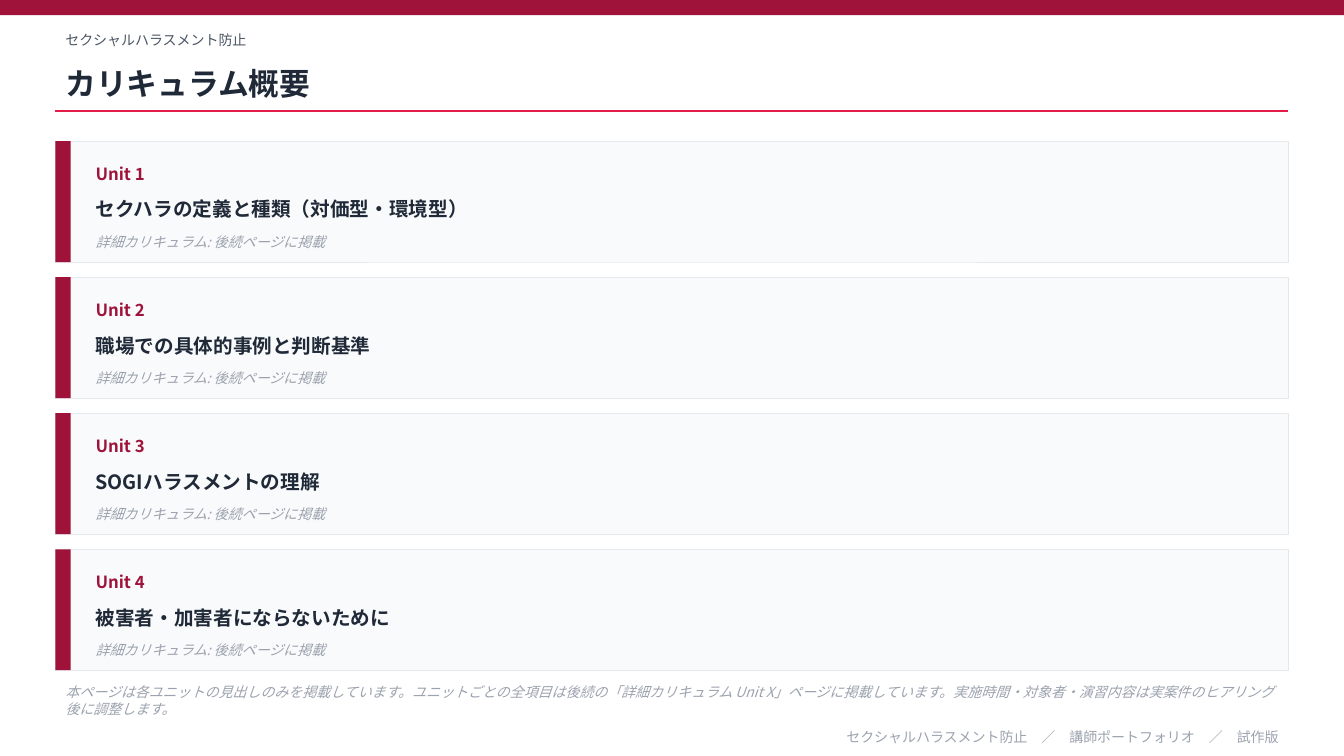
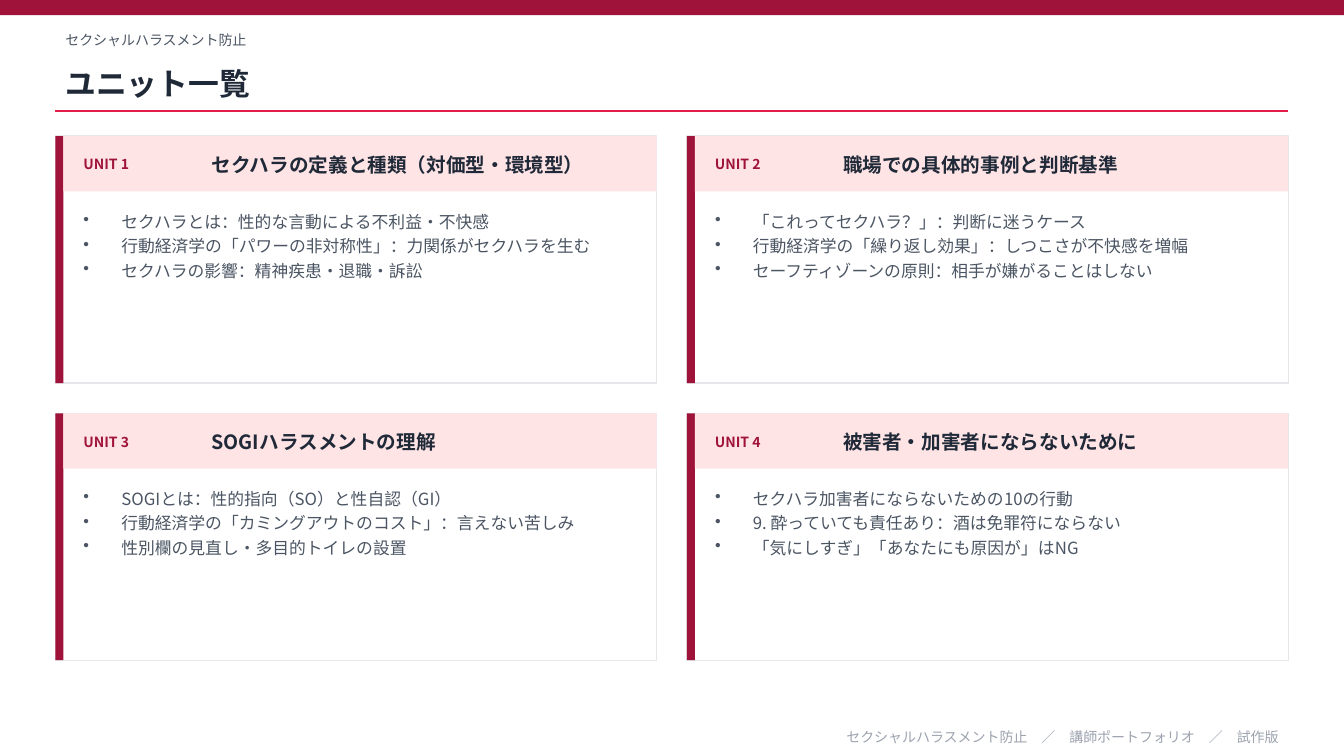
from lxml.etree import SubElement
from pptx import Presentation
from pptx.dml.color import RGBColor
from pptx.enum.shapes import MSO_CONNECTOR, MSO_SHAPE
from pptx.enum.text import MSO_ANCHOR, PP_ALIGN
from pptx.oxml.ns import qn
from pptx.util import Inches, Pt

FONT = "Noto Sans CJK JP"
COLORS = {
    "brand": "9F1239", "rule": "E11D48", "tint": "FFE4E6", "panel": "F9FAFB",
    "white": "FFFFFF", "border": "E5E7EB", "ink": "1F2937", "body": "4B5563",
    "muted": "9CA3AF",
}
COURSE = "セクシャルハラスメント防止"
FOOTER = COURSE + "　／　講師ポートフォリオ　／　試作版"
DETAIL = "詳細カリキュラム: 後続ページに掲載"
NOTE = ("本ページは各ユニットの見出しのみを掲載しています。"
        "ユニットごとの全項目は後続の「詳細カリキュラム Unit X」ページに掲載しています。"
        "実施時間・対象者・演習内容は実案件のヒアリング後に調整します。")
UNITS = [
    ("セクハラの定義と種類（対価型・環境型）", [
        "セクハラとは：性的な言動による不利益・不快感",
        "行動経済学の「パワーの非対称性」：力関係がセクハラを生む",
        "セクハラの影響：精神疾患・退職・訴訟"]),
    ("職場での具体的事例と判断基準", [
        "「これってセクハラ？」：判断に迷うケース",
        "行動経済学の「繰り返し効果」：しつこさが不快感を増幅",
        "セーフティゾーンの原則：相手が嫌がることはしない"]),
    ("SOGIハラスメントの理解", [
        "SOGIとは：性的指向（SO）と性自認（GI）",
        "行動経済学の「カミングアウトのコスト」：言えない苦しみ",
        "性別欄の見直し・多目的トイレの設置"]),
    ("被害者・加害者にならないために", [
        "セクハラ加害者にならないための10の行動",
        "9. 酔っていても責任あり：酒は免罪符にならない",
        "「気にしすぎ」「あなたにも原因が」はNG"]),
]


class Deck:
    """Style and current slide, laid out on a grid of 0.1-inch cells."""

    CELL = 0.1
    COLS, ROWS = 133.33, 75
    MARGIN = 5.5
    WIDTH = 122.3

    def __init__(self):
        """Start an empty deck."""
        self.prs = Presentation()
        self.prs.slide_width = self.cells(self.COLS)
        self.prs.slide_height = self.cells(self.ROWS)
        self.s = None

    def cells(self, n):
        """Turn a number of grid cells into a length."""
        return Inches(n * self.CELL)

    def color(self, name):
        """Look up a palette colour."""
        return RGBColor.from_string(COLORS[name])

    def slide(self, title):
        """Add a slide with the shared band, heading, rule and footer."""
        self.s = self.prs.slides.add_slide(self.prs.slide_layouts[6])
        self.rect(0, 0, self.COLS, 1.5, "brand")
        self.text(self.MARGIN, 2.5, self.WIDTH, 3, COURSE, 10, "body")
        self.text(self.MARGIN, 5.5, self.WIDTH, 5.5, title, 22, "ink", bold=True)
        self.rule(self.MARGIN, 11, self.WIDTH)
        self.text(self.MARGIN, 72, self.WIDTH, 2.2, FOOTER, 10, "muted",
                  align=PP_ALIGN.RIGHT)

    def rect(self, x, y, w, h, fill, border=None):
        """Draw a filled rectangle, with an optional border width."""
        sp = self.s.shapes.add_shape(MSO_SHAPE.RECTANGLE, *map(self.cells, (x, y, w, h)))
        sp.shadow.inherit = False
        sp.fill.solid()
        sp.fill.fore_color.rgb = self.color(fill)
        if border:
            sp.line.color.rgb = self.color("border")
            sp.line.width = Pt(border)
        else:
            sp.line.fill.background()

    def rule(self, x, y, w):
        """Draw the horizontal rule under the title."""
        ln = self.s.shapes.add_connector(
            MSO_CONNECTOR.STRAIGHT, *map(self.cells, (x, y, x + w, y)))
        ln.line.color.rgb = self.color("rule")
        ln.line.width = Pt(1)
        SubElement(ln._element.spPr, qn("a:effectLst"))

    def text(self, x, y, w, h, text, size, color, bold=False, italic=False,
             align=PP_ALIGN.LEFT, anchor=MSO_ANCHOR.MIDDLE):
        """Add a wrapped text box and return its text frame."""
        tf = self.s.shapes.add_textbox(*map(self.cells, (x, y, w, h))).text_frame
        tf.word_wrap = True
        tf.vertical_anchor = anchor
        tf.text = text
        for p in tf.paragraphs:
            p.alignment = align
            for r in p.runs:
                r.font.name = FONT
                r.font.size = Pt(size)
                r.font.bold = bold
                r.font.italic = italic
                r.font.color.rgb = self.color(color)
                SubElement(r.font._element, qn("a:ea"), typeface=FONT)
        return tf

    def bullets(self, x, y, w, h, items):
        """Add a bulleted list."""
        tf = self.text(x, y, w, h, "\n".join(items), 12, "body", anchor=MSO_ANCHOR.TOP)
        indent = self.cells(3.75)
        for p in tf.paragraphs:
            pPr = p._p.get_or_add_pPr()
            pPr.set("marL", str(indent))
            pPr.set("indent", str(-indent))
            SubElement(pPr, qn("a:buChar"), char="•")
            p.space_after = Pt(3)

    def unit_row(self, y, number, title):
        """Draw one full-width unit row."""
        x, w = self.MARGIN + 3, self.WIDTH - 5
        self.rect(self.MARGIN, y, self.WIDTH, 12, "panel", border=0.5)
        self.rect(self.MARGIN, y, 1.5, 12, "brand")
        self.text(x, y + 1.2, 15, 4, f"Unit {number}", 12, "brand", bold=True)
        self.text(x, y + 4.5, w, 4.5, title, 14, "ink", bold=True)
        self.text(x, y + 8.5, w, 3, DETAIL, 10, "muted", italic=True)

    def unit_card(self, x, y, w, h, number, title, items):
        """Draw one unit card with a header and its topics."""
        bar = 0.8
        self.rect(x, y, w, h, "white", border=1)
        self.rect(x, y, bar, h, "brand")
        self.rect(x + bar, y, w - bar, 5.5, "tint")
        self.text(x + 1.8, y + 0.8, 12, 4, f"UNIT {number}", 10, "brand", bold=True)
        self.text(x + 14.5, y + 0.8, w - 16, 4, title, 14, "ink", bold=True)
        self.bullets(x + 1.8, y + 7, w - 3.6, 16, items)


def main():
    """Build and save the deck."""
    deck = Deck()

    deck.slide("カリキュラム概要")
    for i, (title, _) in enumerate(UNITS):
        deck.unit_row(14 + i * 13.5, i + 1, title)
    deck.text(deck.MARGIN, 67.5, deck.WIDTH, 4, NOTE, 10, "muted", italic=True)

    deck.slide("ユニット一覧")
    gap = 3
    w, h = (deck.WIDTH - gap) / 2, 24.5
    for i, (title, items) in enumerate(UNITS):
        row, col = divmod(i, 2)
        deck.unit_card(deck.MARGIN + col * (w + gap), 13.5 + row * (h + gap),
                       w, h, i + 1, title, items)

    deck.prs.save("out.pptx")


if __name__ == "__main__":
    main()
